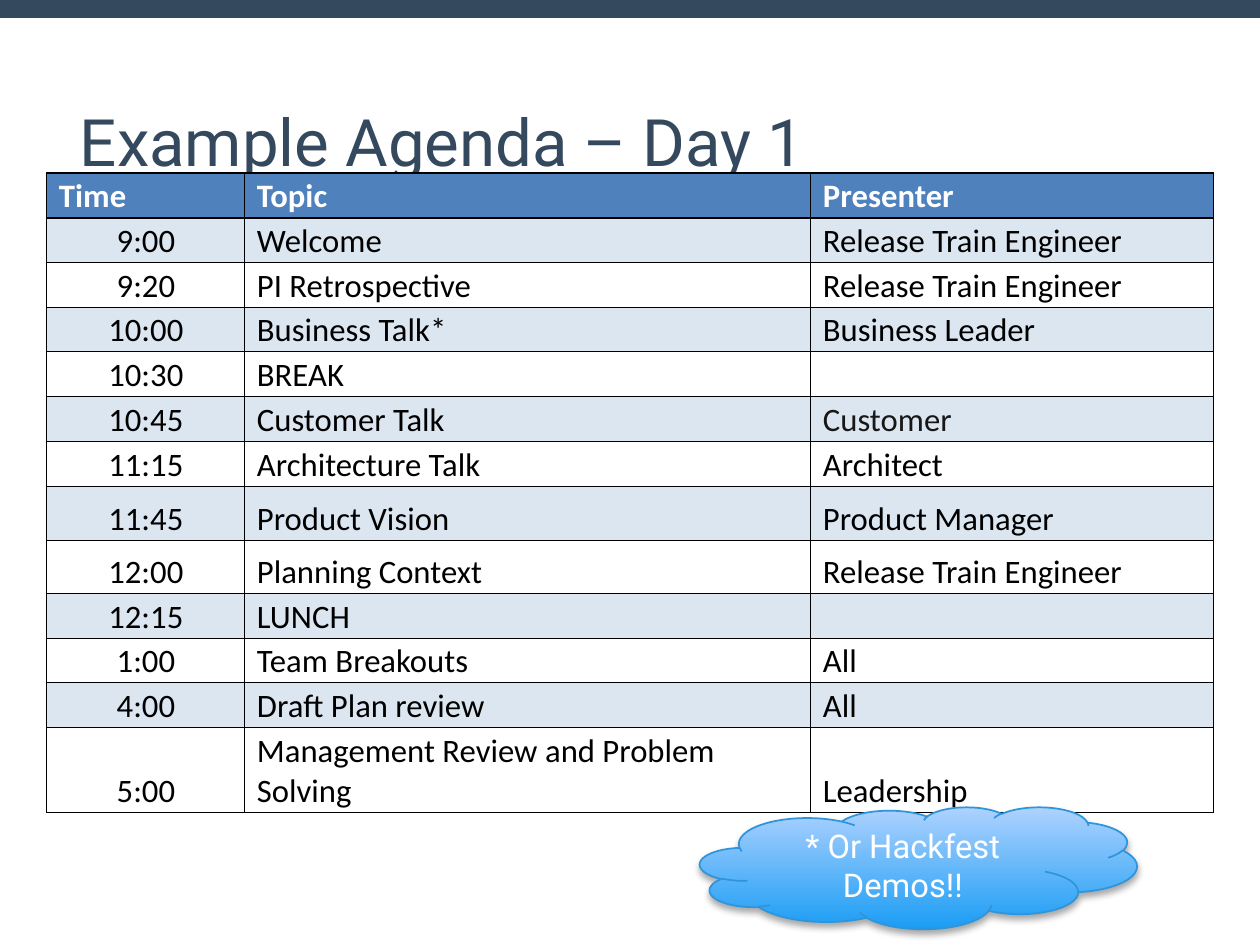
import pptx
import pptx.util
import pptx.dml.color
import pptx.enum.shapes
import pptx.enum.text
import pptx.oxml
import pptx.oxml.ns

# Content
TITLE = "Example Agenda – Day 1"
NOTE = "* Or Hackfest Demos!!"
ROWS = [
    ("Time", "Topic", "Presenter"),
    ("9:00", "Welcome", "Release Train Engineer"),
    ("9:20", "PI Retrospective", "Release Train Engineer"),
    ("10:00", "Business Talk*", "Business Leader"),
    ("10:30", "BREAK", ""),
    ("10:45", "Customer Talk", "Customer"),
    ("11:15", "Architecture Talk", "Architect"),
    ("11:45", "Product Vision", "Product Manager"),
    ("12:00", "Planning Context", "Release Train Engineer"),
    ("12:15", "LUNCH", ""),
    ("1:00", "Team Breakouts", "All"),
    ("4:00", "Draft Plan review", "All"),
    ("5:00", "Management Review and Problem Solving", "Leadership"),
]
COLORS = {
    "navy": "34495E", "head": "4F81BD", "band": "DCE6F1", "white": "FFFFFF",
    "black": "000000", "soft": "171717", "deep": "1B9DF4", "pale": "AED2FF",
    "edge": "2F95DA",
}

# Layout in px
SCALE = 914400 // 168
COLS = [47, 245, 811, 1214]
LINES = [173, 218, 263, 308, 352, 397, 442, 487, 541, 594, 639, 683, 728, 813]

ALIGN = pptx.enum.text.PP_ALIGN
ANCHOR = pptx.enum.text.MSO_ANCHOR
SHAPE = pptx.enum.shapes.MSO_SHAPE
NS = pptx.oxml.ns.nsdecls("a")


def px(*nums):
    return [pptx.util.Emu(n * SCALE) for n in nums]


def rgb(name):
    return pptx.dml.color.RGBColor.from_string(COLORS[name])


def write(frame, text, face, size, color, align, bold=False):
    frame.text = text
    para = frame.paragraphs[0]
    para.alignment = align
    for run in para.runs:
        run.font.name = face
        run.font.size = pptx.util.Pt(size)
        run.font.bold = bold
        run.font.color.rgb = rgb(color)
    if not text:
        para._p.get_or_add_endParaRPr().set("sz", str(size * 100))


def border(cell):
    props = cell._tc.get_or_add_tcPr()
    for spot, side in enumerate("LRTB"):
        props.insert(spot, pptx.oxml.parse_xml(
            f'<a:ln{side} {NS} w="6350"><a:solidFill>'
            f'<a:srgbClr val="{COLORS["black"]}"/></a:solidFill></a:ln{side}>'))


deck = pptx.Presentation()
deck.slide_width, deck.slide_height = px(1260, 945)
slide = deck.slides.add_slide(deck.slide_layouts[5])

# Top bar
bar = slide.shapes.add_shape(SHAPE.RECTANGLE, *px(0, 0, 1260, 18))
bar.shadow.inherit = False
bar.fill.solid()
bar.fill.fore_color.rgb = rgb("navy")
bar.line.fill.background()

# Title
title = slide.shapes.title
title.left, title.top, title.width, title.height = px(63, 39, 1134, 158)
frame = title.text_frame
frame.auto_size = pptx.enum.text.MSO_AUTO_SIZE.NONE
frame.word_wrap = True
frame.vertical_anchor = ANCHOR.BOTTOM
frame.margin_left, frame.margin_top, frame.margin_right, frame.margin_bottom = px(17, 17, 17, 17)
write(frame, TITLE, "Roboto", 28, "navy", ALIGN.LEFT)

# Agenda table
area = px(COLS[0], LINES[0], COLS[-1] - COLS[0], LINES[-1] - LINES[0])
table = slide.shapes.add_table(len(ROWS), len(COLS) - 1, *area).table
table.horz_banding = table.first_row = False
for col, a, b in zip(table.columns, COLS, COLS[1:]):
    col.width = px(b - a)[0]
for row, a, b in zip(table.rows, LINES, LINES[1:]):
    row.height = px(b - a)[0]
for r, texts in enumerate(ROWS):
    back = "head" if r == 0 else "band" if r % 2 else "white"
    for c, text in enumerate(texts):
        cell = table.cell(r, c)
        cell.vertical_anchor = ANCHOR.BOTTOM
        cell.margin_left, cell.margin_top, cell.margin_right, cell.margin_bottom = px(12, 2, 12, 2)
        cell.fill.solid()
        cell.fill.fore_color.rgb = rgb(back)
        ink = "white" if r == 0 else "soft" if text == "Customer" else "black"
        align = ALIGN.CENTER if r and c == 0 else ALIGN.LEFT
        write(cell.text_frame, text, "Calibri", 14, ink, align, r == 0)
        border(cell)

# Cloud note
cloud = slide.shapes.add_shape(SHAPE.CLOUD, *px(700, 807, 437, 122))
cloud.fill.gradient()
cloud.fill.gradient_angle = 90
for stop, name, spot in zip(cloud.fill.gradient_stops, ("deep", "pale"), (0, 1)):
    stop.color.rgb = rgb(name)
    stop.position = spot
cloud.line.color.rgb = rgb("edge")
cloud.line.width = pptx.util.Pt(0.75)
cloud._element.spPr.append(pptx.oxml.parse_xml(
    f'<a:effectLst {NS}><a:outerShdw blurRad="39370" dist="22860" dir="5400000" '
    f'rotWithShape="0"><a:srgbClr val="{COLORS["black"]}"><a:alpha val="35000"/>'
    '</a:srgbClr></a:outerShdw></a:effectLst>'))
cloud.text_frame.word_wrap = True
cloud.text_frame.vertical_anchor = ANCHOR.MIDDLE
write(cloud.text_frame, NOTE, "Roboto", 14, "white", ALIGN.CENTER)

deck.save("out.pptx")
